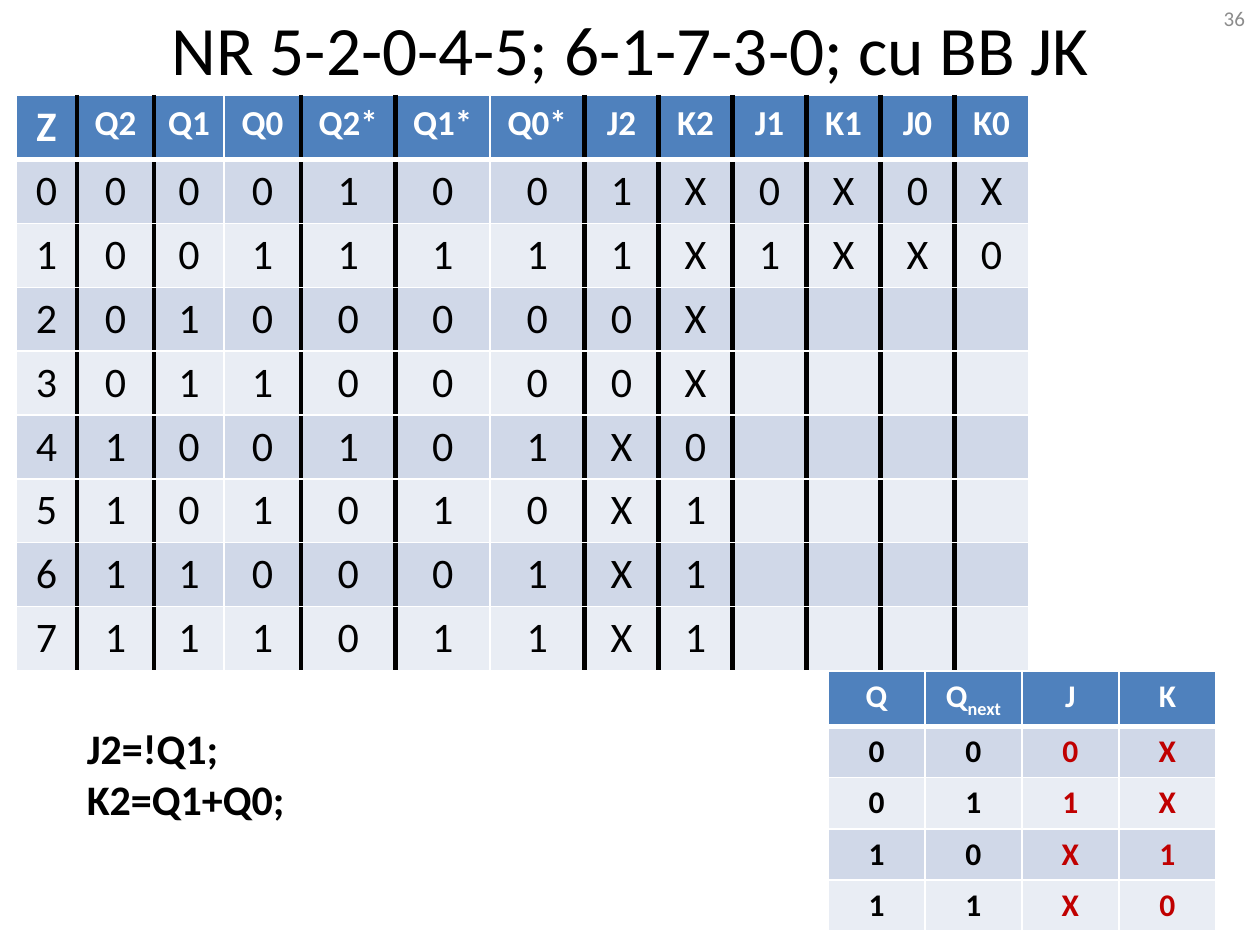
from pptx import Presentation
from pptx.util import Pt
from pptx.dml.color import RGBColor
from pptx.enum.text import PP_ALIGN as Align, MSO_ANCHOR as Anchor
from pptx.oxml.ns import qn
from lxml.etree import SubElement

BLACK = RGBColor(0x00, 0x00, 0x00)
WHITE = RGBColor(0xFF, 0xFF, 0xFF)
GRAY = RGBColor(0x8C, 0x8C, 0x8C)
RED = RGBColor(0xC0, 0x00, 0x00)
HEADER = RGBColor(0x4F, 0x81, 0xBD)
BANDS = [RGBColor(0xE9, 0xED, 0xF4), RGBColor(0xD0, 0xD8, 0xE8)]

prs = Presentation()
prs.slide_width, prs.slide_height = Pt(720), Pt(540)
slide = prs.slides.add_slide(prs.slide_layouts[6])


def add_text(paragraph, text, size, color, bold=False, align=Align.CENTER):
    paragraph.alignment = align
    run = paragraph.add_run()
    run.text = text
    run.font.name = "Calibri"
    run.font.size = Pt(size)
    run.font.bold = bold
    run.font.color.rgb = color
    return run


def add_grid(left, top, widths, row_height, row_count, thick_after):
    """Add a banded table; black rules follow the columns in thick_after."""
    grid = slide.shapes.add_table(row_count, len(widths), Pt(left), Pt(top),
                                  Pt(sum(widths)), Pt(row_height * row_count)).table
    grid.horz_banding = False
    for column, width in zip(grid.columns, widths):
        column.width = Pt(width)
    for r, row in enumerate(grid.rows):
        row.height = Pt(row_height)
        for c, cell in enumerate(row.cells):
            borders = {
                "a:lnL": (BLACK, 3) if c - 1 in thick_after else (WHITE, 1),
                "a:lnR": (BLACK, 3) if c in thick_after else (WHITE, 1),
                "a:lnT": (WHITE, 3 if r == 1 else 1),
                "a:lnB": (WHITE, 3 if r == 0 else 1),
            }
            cell_props = cell._tc.get_or_add_tcPr()
            for side, (color, weight) in borders.items():
                line = SubElement(cell_props, qn(side), w=str(Pt(weight)))
                line_fill = SubElement(line, qn("a:solidFill"))
                SubElement(line_fill, qn("a:srgbClr"), val=str(color))
            cell.fill.solid()
            cell.fill.fore_color.rgb = HEADER if r == 0 else BANDS[r % 2]
    return grid


# Title, slide number and equations
for left, top, width, height, lines, size, color, bold, align, anchor in [
    (36.5, 0, 648, 54.5, ["NR 5-2-0-4-5; 6-1-7-3-0; cu BB JK"],
     39.6, BLACK, False, Align.CENTER, Anchor.MIDDLE),
    (689, 0, 29.5, 21, ["36"], 12, GRAY, False, Align.RIGHT, Anchor.MIDDLE),
    (42.5, 409.5, 181.5, 65.5, ["J2=!Q1;", "K2=Q1+Q0;"],
     24, BLACK, True, Align.LEFT, Anchor.TOP),
]:
    frame = slide.shapes.add_textbox(Pt(left), Pt(top), Pt(width), Pt(height)).text_frame
    frame.word_wrap = True
    frame.vertical_anchor = anchor
    for i, line_text in enumerate(lines):
        paragraph = frame.add_paragraph() if i else frame.paragraphs[0]
        add_text(paragraph, line_text, size, color, bold, align)

# State transition table
transitions = [
    "Z Q2 Q1 Q0 Q2* Q1* Q0* J2 K2 J1 K1 J0 K0",
    "0 0 0 0 1 0 0 1 X 0 X 0 X",
    "1 0 0 1 1 1 1 1 X 1 X X 0",
    "2 0 1 0 0 0 0 0 X",
    "3 0 1 1 0 0 0 0 X",
    "4 1 0 0 1 0 1 X 0",
    "5 1 0 1 0 1 0 X 1",
    "6 1 1 0 0 0 1 X 1",
    "7 1 1 1 0 1 1 X 1",
]
state_widths = [35, 44, 40, 44] + [54] * 3 + [42.3] * 6
states = add_grid(9, 54.7, state_widths, 36.5, len(transitions),
                  {0, 1, 3, 4, *range(6, 12)})
for r, values in enumerate(transitions):
    for c, value in enumerate(values.split()):
        size = 20 if r == 0 and c > 0 else 24
        add_text(states.cell(r, c).text_frame.paragraphs[0], value, size,
                 BLACK if r else WHITE, bold=r == 0)

# JK excitation table
excitations = ["Q Q J K", "0 0 0 X", "0 1 1 X", "1 0 X 1", "1 1 X 0"]
excitation = add_grid(473.2, 383.4, [55.4] * 4, 29.2, len(excitations), set())
for r, values in enumerate(excitations):
    for c, value in enumerate(values.split()):
        color = WHITE if r == 0 else RED if c > 1 else BLACK
        add_text(excitation.cell(r, c).text_frame.paragraphs[0], value, 18, color, bold=True)
subscript = add_text(excitation.cell(0, 1).text_frame.paragraphs[0], "next", 18, WHITE, bold=True)
subscript._r.get_or_add_rPr().set("baseline", "-25000")

prs.save("out.pptx")
